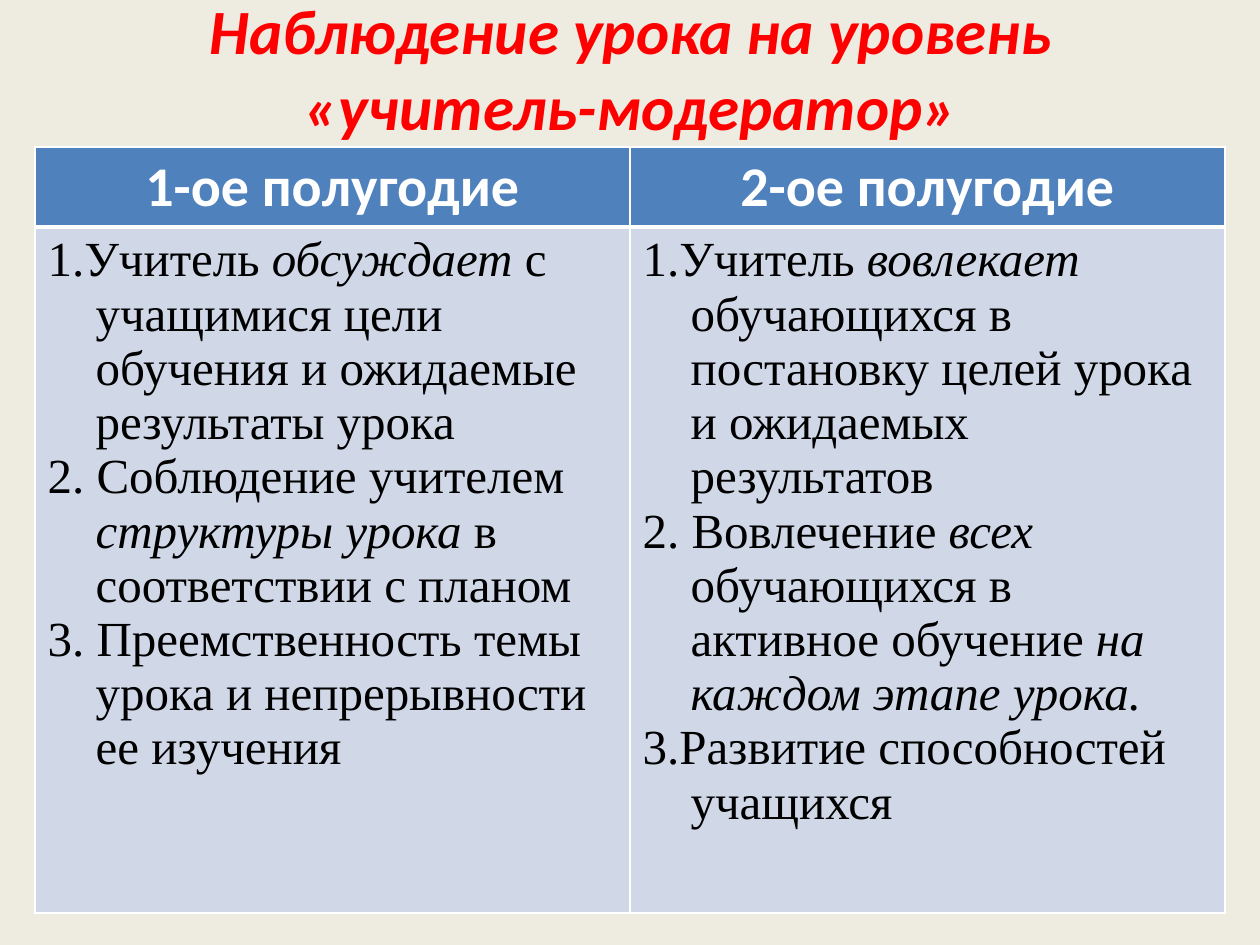
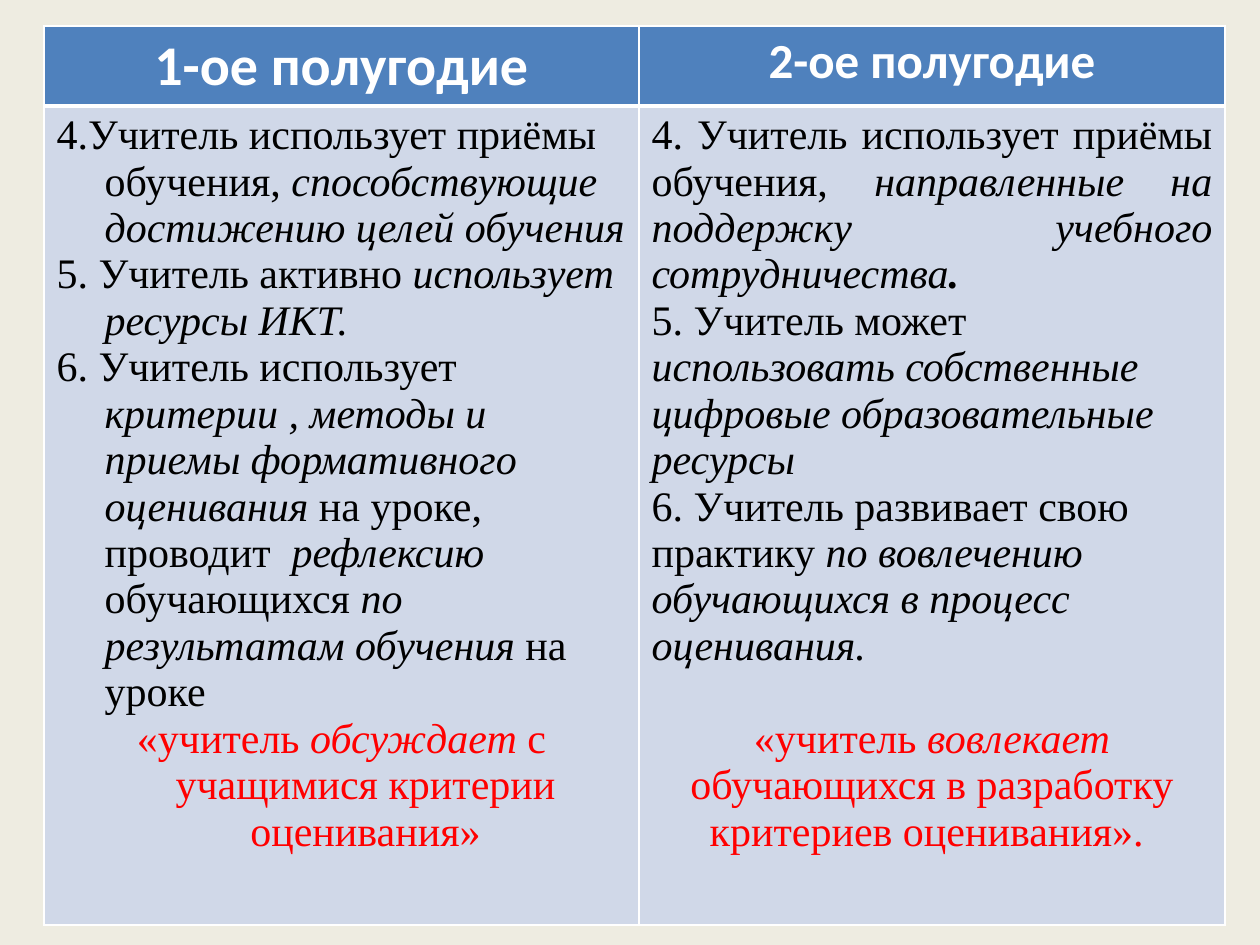
import dataclasses

import lxml.etree
import pptx
import pptx.dml.color
import pptx.enum.text
import pptx.oxml.ns
import pptx.util

EMU_PER_PX = 914400 / 126
ALIGN = pptx.enum.text.PP_ALIGN
ANCHOR = pptx.enum.text.MSO_ANCHOR


@dataclasses.dataclass(frozen=True)
class Theme:
    background: str = "EEECE1"
    header_fill: str = "4F81BD"
    body_fill: str = "D0D8E8"
    border: str = "FFFFFF"
    header_text: str = "FFFFFF"
    body_text: str = "000000"
    accent: str = "FF0000"
    heading_font: str = "Calibri"
    body_font: str = "Times New Roman"
    title_size: int = 36
    header_size: int = 32
    small_header_size: int = 28
    body_size: int = 28
    dense_body_size: int = 24
    thin: int = 1
    thick: int = 3
    hanging: int = 48


THEME = Theme()


def px(length):
    return pptx.util.Emu(round(length * EMU_PER_PX))


def rgb(color):
    return pptx.dml.color.RGBColor.from_string(color)


def write_text(para, text, *, size, color=THEME.body_text, font=THEME.body_font,
               bold=False, italic=False, align=ALIGN.LEFT, hanging=0, gap=0):
    """Asterisks toggle italic, underscores toggle bold."""
    para.alignment = align
    para.space_before = pptx.util.Pt(gap)
    if hanging:
        properties = para._p.get_or_add_pPr()
        properties.set("marL", str(px(hanging)))
        properties.set("indent", str(-px(hanging)))
    for i, slanted in enumerate(text.split("*")):
        for j, piece in enumerate(slanted.split("_")):
            if not piece:
                continue
            span = para.add_run()
            span.text = piece
            span.font.name = font
            span.font.size = pptx.util.Pt(size)
            span.font.bold = bold or j % 2 == 1
            span.font.italic = italic or i % 2 == 1
            span.font.color.rgb = rgb(color)


def write_cell(cell, items, **shared):
    for index, (text, own) in enumerate(items):
        frame = cell.text_frame
        para = frame.add_paragraph() if index else frame.paragraphs[0]
        write_text(para, text, **{**shared, **own})


def style_cell(cell, fill, **thickness):
    properties = cell._tc.get_or_add_tcPr()
    for side in ("L", "R", "T", "B"):
        width = pptx.util.Pt(thickness.get(side, THEME.thin))
        line = lxml.etree.SubElement(
            properties, pptx.oxml.ns.qn(f"a:ln{side}"), w=str(width))
        solid = lxml.etree.SubElement(line, pptx.oxml.ns.qn("a:solidFill"))
        lxml.etree.SubElement(
            solid, pptx.oxml.ns.qn("a:srgbClr"), val=THEME.border)
    cell.fill.solid()
    cell.fill.fore_color.rgb = rgb(fill)


def add_page(deck):
    page = deck.slides.add_slide(deck.slide_layouts[6])
    page.background.fill.solid()
    page.background.fill.fore_color.rgb = rgb(THEME.background)
    return page


def add_title(page, text):
    box = page.shapes.add_textbox(px(64), px(0), px(1134), px(134))
    frame = box.text_frame
    frame.word_wrap = True
    frame.vertical_anchor = ANCHOR.MIDDLE
    write_text(frame.paragraphs[0], text, size=THEME.title_size,
               color=THEME.accent, font=THEME.heading_font,
               bold=True, italic=True, align=ALIGN.CENTER)


def add_half_year_table(page, left, top, widths, heights, header_sizes,
                        columns, body_size):
    table = page.shapes.add_table(2, 2, px(left), px(top), px(sum(widths)),
                                  px(sum(heights))).table
    for row, height in zip(table.rows, heights):
        row.height = px(height)
    for index, (width, header_size, items) in enumerate(
            zip(widths, header_sizes, columns)):
        table.columns[index].width = px(width)
        header, body = table.cell(0, index), table.cell(1, index)
        style_cell(header, THEME.header_fill, B=THEME.thick)
        style_cell(body, THEME.body_fill, T=THEME.thick)
        write_text(header.text_frame.paragraphs[0], f"{index + 1}-ое полугодие",
                   size=header_size, color=THEME.header_text,
                   font=THEME.heading_font, bold=True, align=ALIGN.CENTER)
        write_cell(body, items, size=body_size)


def build_goals_page(deck):
    page = add_page(deck)
    add_title(page, "Наблюдение урока на уровень «учитель-модератор»")
    hanging = {"hanging": THEME.hanging}
    first = [
        ("1.Учитель *обсуждает *с учащимися цели обучения и ожидаемые "
         "результаты урока", hanging),
        ("2. Соблюдение учителем *структуры урока* в соответствии с планом",
         hanging),
        ("3. Преемственность темы урока и непрерывности ее изучения", hanging),
    ]
    second = [
        ("1.Учитель *вовлекает* обучающихся в постановку целей урока "
         "и ожидаемых результатов", hanging),
        ("2. Вовлечение *всех* обучающихся в активное обучение "
         "*на каждом этапе урока.*", hanging),
        ("3.Развитие способностей учащихся", hanging),
    ]
    add_half_year_table(page, 35, 147, (595, 595), (80, 686),
                        (THEME.header_size, THEME.header_size),
                        (first, second), THEME.body_size)


def build_methods_page(deck):
    page = add_page(deck)
    hanging = {"hanging": THEME.hanging}
    quote = {"color": THEME.accent, "align": ALIGN.CENTER}
    first = [
        ("4.Учитель использует приёмы обучения, "
         "*способствующие достижению целей обучения*", hanging),
        ("5. Учитель активно *использует ресурсы ИКТ.*", hanging),
        ("6. Учитель использует *критерии , методы и приемы формативного "
         "оценивания *на уроке, проводит  *рефлексию *обучающихся "
         "*по результатам обучения *на уроке", hanging),
        ("«учитель *обсуждает* с учащимися критерии оценивания»",
         {**hanging, **quote}),
    ]
    second = [
        ("4. Учитель использует приёмы обучения, *направленные на поддержку "
         "учебного сотрудничества_._*", {"align": ALIGN.JUSTIFY}),
        ("5. Учитель может *использовать собственные цифровые "
         "образовательные ресурсы*", {}),
        ("6. Учитель развивает свою практику *по вовлечению обучающихся "
         "в процесс оценивания.*", {}),
        ("«учитель *вовлекает* обучающихся в разработку критериев "
         "оценивания». ", {**quote, "gap": 26.5}),
    ]
    add_half_year_table(page, 44, 26, (595, 586), (80, 816),
                        (THEME.header_size, THEME.small_header_size),
                        (first, second), THEME.dense_body_size)


def main():
    deck = pptx.Presentation()
    deck.slide_width, deck.slide_height = px(1260), px(945)
    build_goals_page(deck)
    build_methods_page(deck)
    deck.save("out.pptx")


if __name__ == "__main__":
    main()
